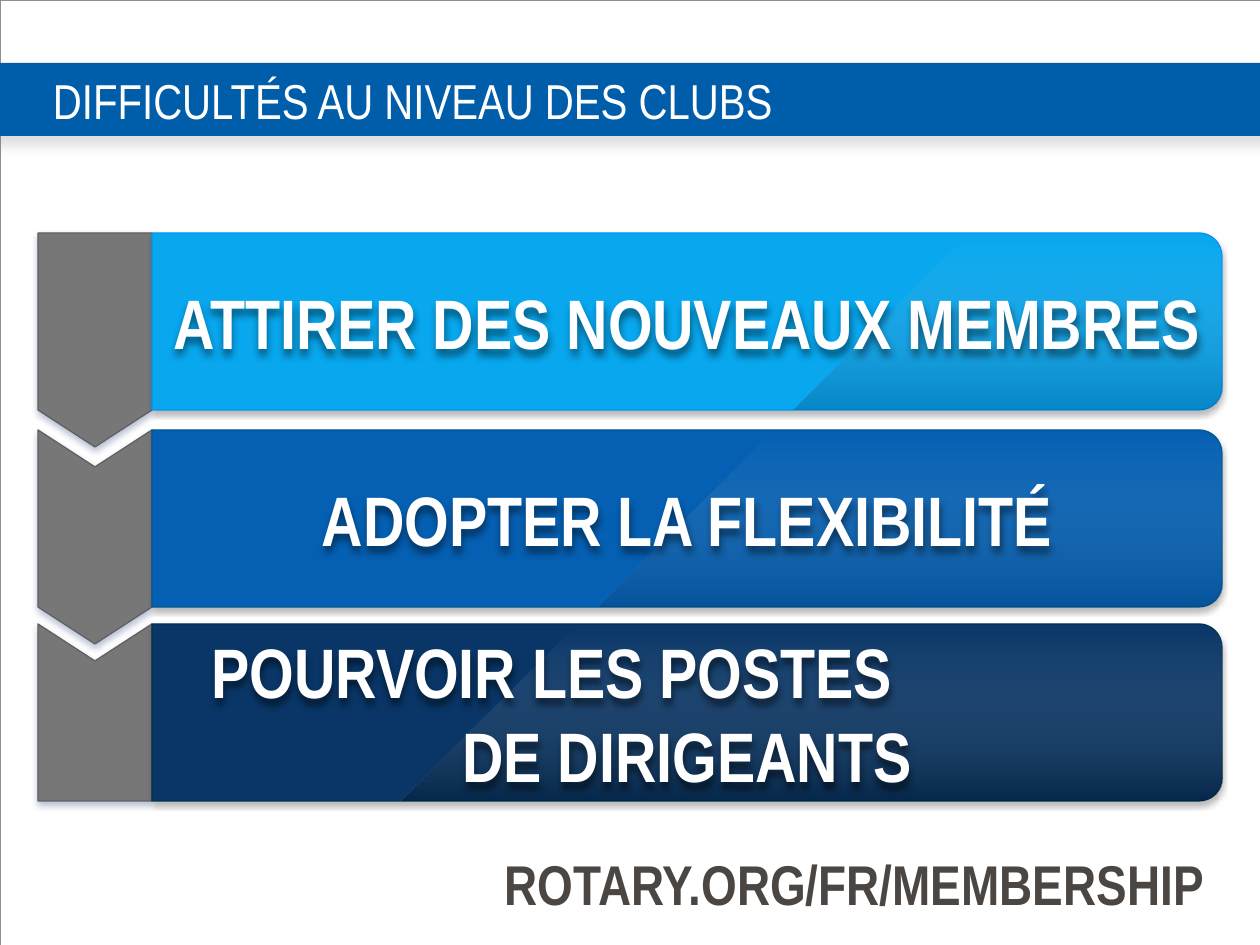
from dataclasses import dataclass
from math import cos, pi, sin

from lxml import etree
from pptx import Presentation
from pptx.dml.color import RGBColor
from pptx.enum.shapes import MSO_SHAPE
from pptx.enum.text import MSO_ANCHOR, MSO_AUTO_SIZE, PP_ALIGN
from pptx.oxml.ns import qn
from pptx.util import Pt

RECT = MSO_SHAPE.RECTANGLE
MIDDLE, TOP = MSO_ANCHOR.MIDDLE, MSO_ANCHOR.TOP
LEFT, CENTER, RIGHT = PP_ALIGN.LEFT, PP_ALIGN.CENTER, PP_ALIGN.RIGHT
NO_FIT, GROW = MSO_AUTO_SIZE.NONE, MSO_AUTO_SIZE.SHAPE_TO_FIT_TEXT
TITLE_ONLY = 5
EMU_PER_PX = 914400 / 126


@dataclass(frozen=True)
class Theme:
    font: str = "Arial Narrow"
    title_size: int = 28
    panel_size: int = 40
    address_size: int = 32
    white: str = "FFFFFF"
    frame: str = "958D85"
    band: str = "005DAA"
    arrow: str = "777777"
    arrow_edge: str = "606060"
    address: str = "4B4642"
    # Shadows: colour, opacity %, blur pt, distance pt
    band_shadow: tuple = ("808080", 25, 7, 4.8)
    arrow_shadow: tuple = ("00246C", 27, 4, 2)
    panel_shadow: tuple = ("000000", 27, 3, 2)
    text_shadow: tuple = ("000000", 45, 4, 3)


THEME = Theme()

# Lines of text, fill, edge, gloss colour, gloss opacity %
PANELS = [
    (["ATTIRER DES NOUVEAUX MEMBRES"], "08A7EE", "0195F9", "01315D", 28),
    (["ADOPTER LA FLEXIBILITÉ"], "0560B3", "01568F", "01315D", 28),
    (["POURVOIR LES POSTES", "DE DIRIGEANTS"], "093667", "013253", "000C16", 35),
]
ROW_TOPS = (233, 430, 624)
ROW_HEIGHT = 177
ARROW_LEFT, ARROW_WIDTH, ARROW_POINT = 38, 114, 37
PANEL_LEFT, PANEL_WIDTH, CORNER = 152, 1070, 23
GLOSS_START, GLOSS_STEP = 641, 196
LINE_HEIGHT, BOX_PADDING = 86, 11
FIRST_LINE_INDENT = 47


def px(value):
    return round(value * EMU_PER_PX)


def rgb(value):
    return RGBColor.from_string(value)


def set_alpha(color_element, percent):
    etree.SubElement(color_element, qn("a:alpha")).set("val", str(percent * 1000))


def add_shadow(shape, shadow):
    color, opacity, blur, distance = shadow
    shape.shadow.inherit = False
    effects = shape._element.spPr.find(qn("a:effectLst"))
    outer = etree.SubElement(effects, qn("a:outerShdw"), blurRad=str(Pt(blur)),
                             dist=str(Pt(distance)), dir="5400000",
                             algn="t", rotWithShape="0")
    set_alpha(etree.SubElement(outer, qn("a:srgbClr"), val=color), opacity)


def paint(shape, fill=None, edge=None, width=0.75):
    shape.shadow.inherit = False
    if fill:
        shape.fill.solid()
        shape.fill.fore_color.rgb = rgb(fill)
    else:
        shape.fill.background()
    if edge:
        shape.line.color.rgb = rgb(edge)
        shape.line.width = Pt(width)
    else:
        shape.line.fill.background()


def write(shape, lines, size, color, align, anchor, fit, bold=True):
    frame = shape.text_frame
    frame_format = {"word_wrap": True, "vertical_anchor": anchor, "auto_size": fit}
    for name, value in frame_format.items():
        setattr(frame, name, value)
    font_format = {"name": THEME.font, "size": Pt(size), "bold": bold}
    for number, line in enumerate(lines):
        paragraph = frame.add_paragraph() if number else frame.paragraphs[0]
        paragraph.alignment = align
        run = paragraph.add_run()
        run.text = line
        for name, value in font_format.items():
            setattr(run.font, name, value)
        run.font.color.rgb = rgb(color)
    return frame


def add_outline(shapes, points):
    points = [(px(x), px(y)) for x, y in points]
    builder = shapes.build_freeform(*points[0], scale=1.0)
    builder.add_line_segments(points[1:], close=True)
    return builder.convert_to_shape()


def add_header(slide, left, top, width, height):
    """Thin slide frame, blue band and title."""
    frame = slide.shapes.add_shape(RECT, 0, 0, px(1260), px(945))
    paint(frame, edge=THEME.frame, width=0.13)
    band = slide.shapes.add_shape(RECT, *map(px, (left, top, width, height)))
    paint(band, THEME.band)
    add_shadow(band, THEME.band_shadow)

    title = slide.shapes.title
    place = {"left": left + 63, "top": top, "width": 1207, "height": height}
    for name, value in place.items():
        setattr(title, name, px(value))
    text = write(title, ["DIFFICULTÉS AU NIVEAU DES CLUBS"], THEME.title_size,
                 THEME.white, LEFT, MIDDLE, NO_FIT, bold=False)
    for side in ("left", "top", "right", "bottom"):
        setattr(text, f"margin_{side}", 0)
    # The title goes in front of the band
    slide.shapes._spTree.append(title._element)


def add_arrow(slide, left, top, width, height, notched, pointed):
    right, bottom, middle = left + width, top + height, left + width / 2
    points = [(right, top), (right, bottom)]
    if pointed:
        points.append((middle, bottom + ARROW_POINT))
    points += [(left, bottom), (left, top)]
    if notched:
        points.append((middle, top + ARROW_POINT))
    arrow = add_outline(slide.shapes, points)
    paint(arrow, THEME.arrow, THEME.arrow_edge)
    add_shadow(arrow, THEME.arrow_shadow)


def panel_points(left, top, right, height, slant=0):
    """Outline with round right corners and a straight or slanted left side."""
    bottom = top + height
    angles = [step * pi / 16 for step in range(9)]
    upper = [(right - CORNER + CORNER * sin(a), top + CORNER - CORNER * cos(a))
             for a in angles]
    lower = [(right - CORNER + CORNER * cos(a), bottom - CORNER + CORNER * sin(a))
             for a in angles]
    return [(left + slant, top), *upper, *lower, (left, bottom)]


def add_panel(slide, left, top, width, height, gloss_offset, panel):
    _, fill, edge, gloss_color, opacity = panel
    right = left + width
    group = slide.shapes.add_group_shape()
    base = add_outline(group.shapes, panel_points(left, top, right, height))
    paint(base, fill, edge)
    add_shadow(base, THEME.panel_shadow)

    # Gloss fades from dark at the foot to clear at the top
    gloss = add_outline(group.shapes, panel_points(
        left + gloss_offset, top, right, height, slant=height))
    paint(gloss)
    gloss.fill.gradient()
    gloss.fill.gradient_angle = 90
    for stop, color in zip(gloss.fill.gradient_stops, (gloss_color, THEME.white)):
        stop.color.rgb = rgb(color)
    colors = gloss._element.spPr.iter(qn("a:srgbClr"))
    for element, percent in zip(list(colors), (opacity, 0)):
        set_alpha(element, percent)


def add_panel_text(slide, left, top, width, height, lines):
    box_height = len(lines) * LINE_HEIGHT + BOX_PADDING
    box_top = top + (height - box_height) // 2
    box = slide.shapes.add_textbox(*map(px, (left, box_top, width, box_height)))
    paint(box)
    add_shadow(box, THEME.text_shadow)
    text = write(box, lines, THEME.panel_size, THEME.white, CENTER, MIDDLE, GROW)
    if len(lines) > 1:
        first = text.paragraphs[0]
        first.alignment = LEFT
        first._p.get_or_add_pPr().set("marL", str(px(FIRST_LINE_INDENT)))


def add_address(slide, left, top, width, height):
    box = slide.shapes.add_textbox(*map(px, (left, top, width, height)))
    write(box, ["ROTARY.ORG/FR/MEMBERSHIP"], THEME.address_size, THEME.address,
          RIGHT, TOP, GROW)


def main():
    deck = Presentation()
    deck.slide_width, deck.slide_height = px(1260), px(945)
    slide = deck.slides.add_slide(deck.slide_layouts[TITLE_ONLY])
    add_header(slide, -10, 63, 1281, 73)

    # Arrows are stacked from the last row up
    last = len(ROW_TOPS) - 1
    for row in range(last, -1, -1):
        add_arrow(slide, ARROW_LEFT, ROW_TOPS[row], ARROW_WIDTH, ROW_HEIGHT,
                  notched=row > 0, pointed=row < last)
    for row, (top, panel) in enumerate(zip(ROW_TOPS, PANELS)):
        add_panel(slide, PANEL_LEFT, top, PANEL_WIDTH, ROW_HEIGHT,
                  GLOSS_START - row * GLOSS_STEP, panel)
    for top, panel in zip(ROW_TOPS, PANELS):
        add_panel_text(slide, PANEL_LEFT, top, PANEL_WIDTH, ROW_HEIGHT, panel[0])
    add_address(slide, 325, 843, 892, 81)
    deck.save("out.pptx")


if __name__ == "__main__":
    main()
